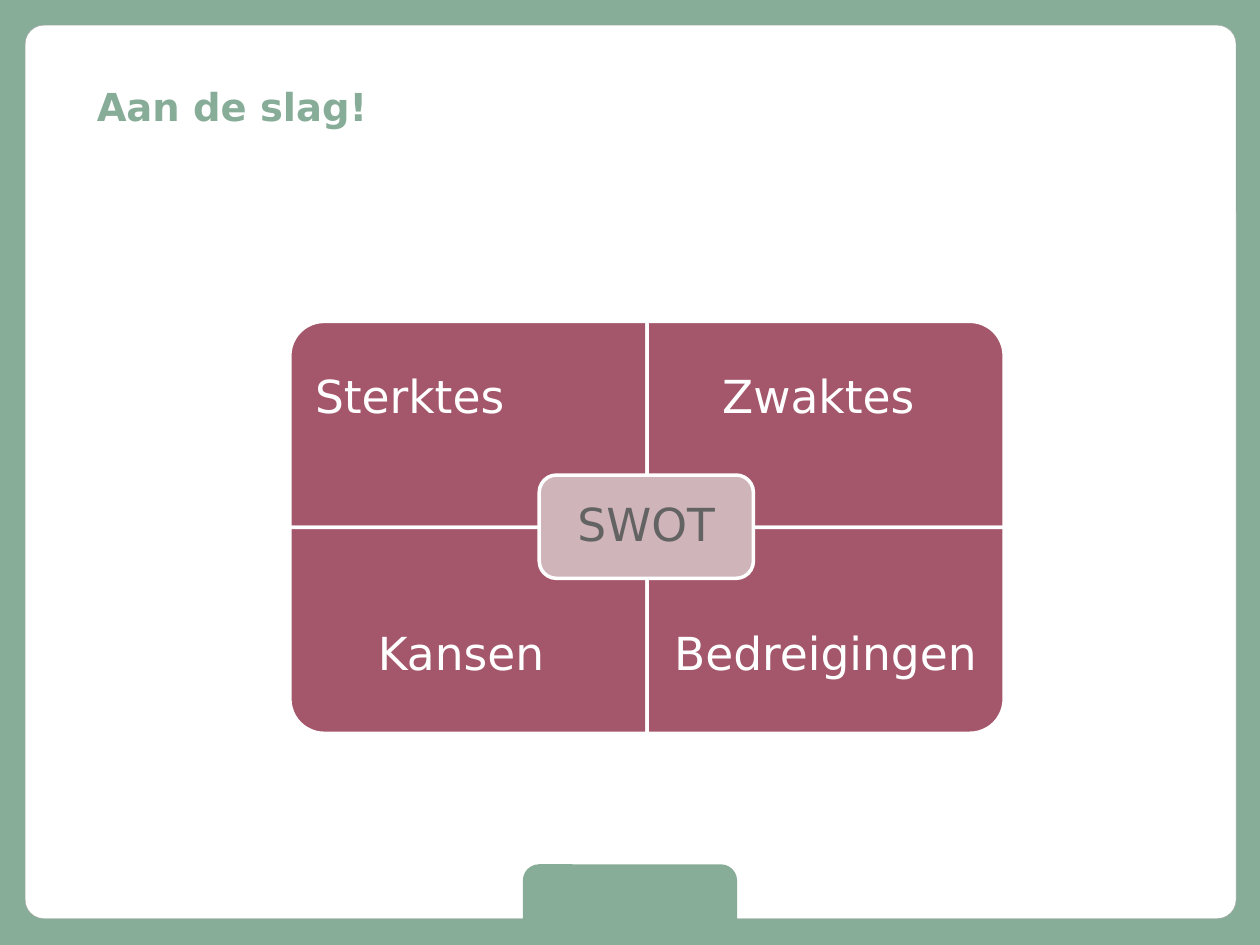
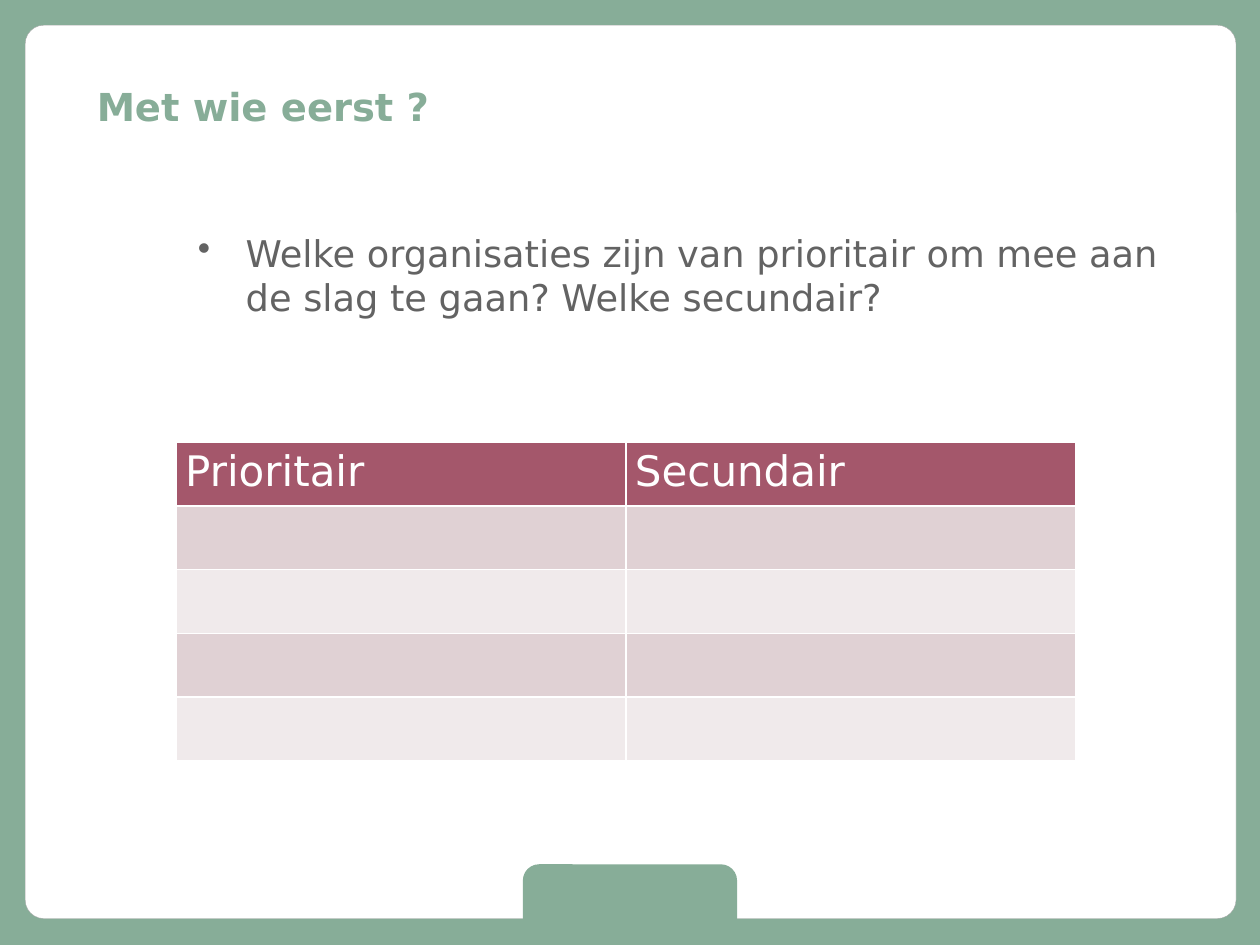
"""Build two slides: a SWOT grid and a table of priorities."""
from lxml.etree import SubElement
from pptx import Presentation
from pptx.dml.color import RGBColor
from pptx.enum.shapes import MSO_SHAPE
from pptx.enum.text import MSO_ANCHOR, PP_ALIGN
from pptx.oxml.ns import qn
from pptx.util import Inches, Pt


class Theme:
    font = "DejaVu Sans"
    green = RGBColor.from_string("87AD98")
    white = RGBColor.from_string("FFFFFF")
    edge = RGBColor.from_string("A4A4A4")
    wine = RGBColor.from_string("A4576B")
    rose = RGBColor.from_string("CFB4BA")
    gray = RGBColor.from_string("636363")
    bands = [RGBColor.from_string("E0D1D4"), RGBColor.from_string("F0EAEB")]
    title, body, label, head = Pt(22), Pt(21), Pt(26), Pt(24)


def draw(slide, kind, box, fill, line=None, width=2):
    shape = slide.shapes.add_shape(kind, *map(Inches, box))
    shape.shadow.inherit = False
    shape.fill.solid()
    shape.fill.fore_color.rgb = fill
    if line is None:
        shape.line.fill.background()
    else:
        shape.line.color.rgb = line
        shape.line.width = Pt(width)
    return shape


def write(frame, text, size, color, inset, para={}, bold=False, anchor=MSO_ANCHOR.MIDDLE):
    across, down = map(Inches, inset)
    form = {"word_wrap": True, "vertical_anchor": anchor,
            "margin_left": across, "margin_right": across,
            "margin_top": down, "margin_bottom": down}
    for key, value in form.items():
        setattr(frame, key, value)
    first = frame.paragraphs[0]
    run = first.add_run()
    run.text = text
    for key, value in para.items():
        setattr(first, key, value)
    for key, value in {"name": Theme.font, "size": size, "bold": bold}.items():
        setattr(run.font, key, value)
    run.font.color.rgb = color
    return first


deck = Presentation()
deck.slide_width, deck.slide_height = Inches(10), Inches(7.5)

slides = []
for title in ["Aan de slag!", "Met wie eerst ?"]:
    slide = deck.slides.add_slide(deck.slide_layouts[6])
    slide.background.fill.solid()
    slide.background.fill.fore_color.rgb = Theme.green
    panel = draw(slide, MSO_SHAPE.ROUNDED_RECTANGLE, (0.2, 0.2, 9.61, 7.09),
                 Theme.white, Theme.edge, 0.16)
    panel.adjustments[0] = 0.021
    tab = draw(slide, MSO_SHAPE.ROUNDED_RECTANGLE, (4.15, 6.86, 1.7, 0.56), Theme.green)
    tab.adjustments[0] = 0.229
    box = slide.shapes.add_textbox(*map(Inches, (0.67, 0.3, 8.83, 1.09)))
    write(box.text_frame, title, Theme.title, Theme.green, (0.1, 0.05), bold=True)
    slides.append(slide)
swot, table = slides

left, top, wide, high, deep = 2.3, 2.55, 2.835, 1.635, 1.23
mid = {"alignment": PP_ALIGN.CENTER, "line_spacing": 0.9, "space_after": Pt(9)}
start = {**mid, "alignment": PP_ALIGN.LEFT}
parts = [("Sterktes", 0, 0, 270, start), ("Zwaktes ", 1, 0, 0, mid),
         ("Kansen ", 0, 1, 180, mid), ("Bedreigingen", 1, 1, 90, mid)]
for text, col, row, turn, para in parts:
    x, y = left + col * wide, top + row * high
    w, h = (high, wide) if turn in (90, 270) else (wide, high)
    part = draw(swot, MSO_SHAPE.ROUND_1_RECTANGLE,
                (x + (wide - w) / 2, y + (high - h) / 2, w, h), Theme.wine, Theme.white)
    part.rotation = turn
    place = (x, y + row * (high - deep), wide, deep)
    box = swot.shapes.add_textbox(*map(Inches, place))
    write(box.text_frame, text, Theme.label, Theme.white, (0.2, 0.2), para)

core = draw(swot, MSO_SHAPE.ROUNDED_RECTANGLE, (4.28, 3.77, 1.7, 0.82),
            Theme.rose, Theme.white)
write(core.text_frame, "SWOT", Theme.label, Theme.gray, (0.11, 0.11), mid)

box = table.shapes.add_textbox(*map(Inches, (1.5, 1.79, 7.95, 4.86)))
ask = write(box.text_frame,
            "Welke organisaties zijn van prioritair om mee aan de slag te gaan? Welke secundair?",
            Theme.body, Theme.gray, (0.07, 0.04), {"space_after": Pt(14)},
            anchor=MSO_ANCHOR.TOP)
props = ask._p.get_or_add_pPr()
props.set("marL", str(Inches(0.38)))
props.set("indent", str(-Inches(0.38)))
SubElement(props, qn("a:buChar"), char="•")

heads = ["Prioritair", "Secundair"]
grid = table.shapes.add_table(5, 2, *map(Inches, (1.4, 3.51, 7.14, 2.53))).table
for row, line in enumerate(grid.rows):
    line.height = Inches(2.53 / 5)
    for col, cell in enumerate(line.cells):
        props = cell._tc.get_or_add_tcPr()
        for side in "LRTB":
            rule = SubElement(props, qn(f"a:ln{side}"), w=str(Pt(1)))
            fill = SubElement(rule, qn("a:solidFill"))
            SubElement(fill, qn("a:srgbClr"), val=str(Theme.white))
        cell.fill.solid()
        cell.fill.fore_color.rgb = Theme.bands[(row - 1) % 2] if row else Theme.wine
        if row == 0:
            write(cell.text_frame, heads[col], Theme.head, Theme.white, (0.07, 0.04))
            for key, value in {"margin_left": 0.07, "margin_right": 0.07,
                               "margin_top": 0.04, "margin_bottom": 0.04}.items():
                setattr(cell, key, Inches(value))
            cell.vertical_anchor = MSO_ANCHOR.TOP

deck.save("out.pptx")
